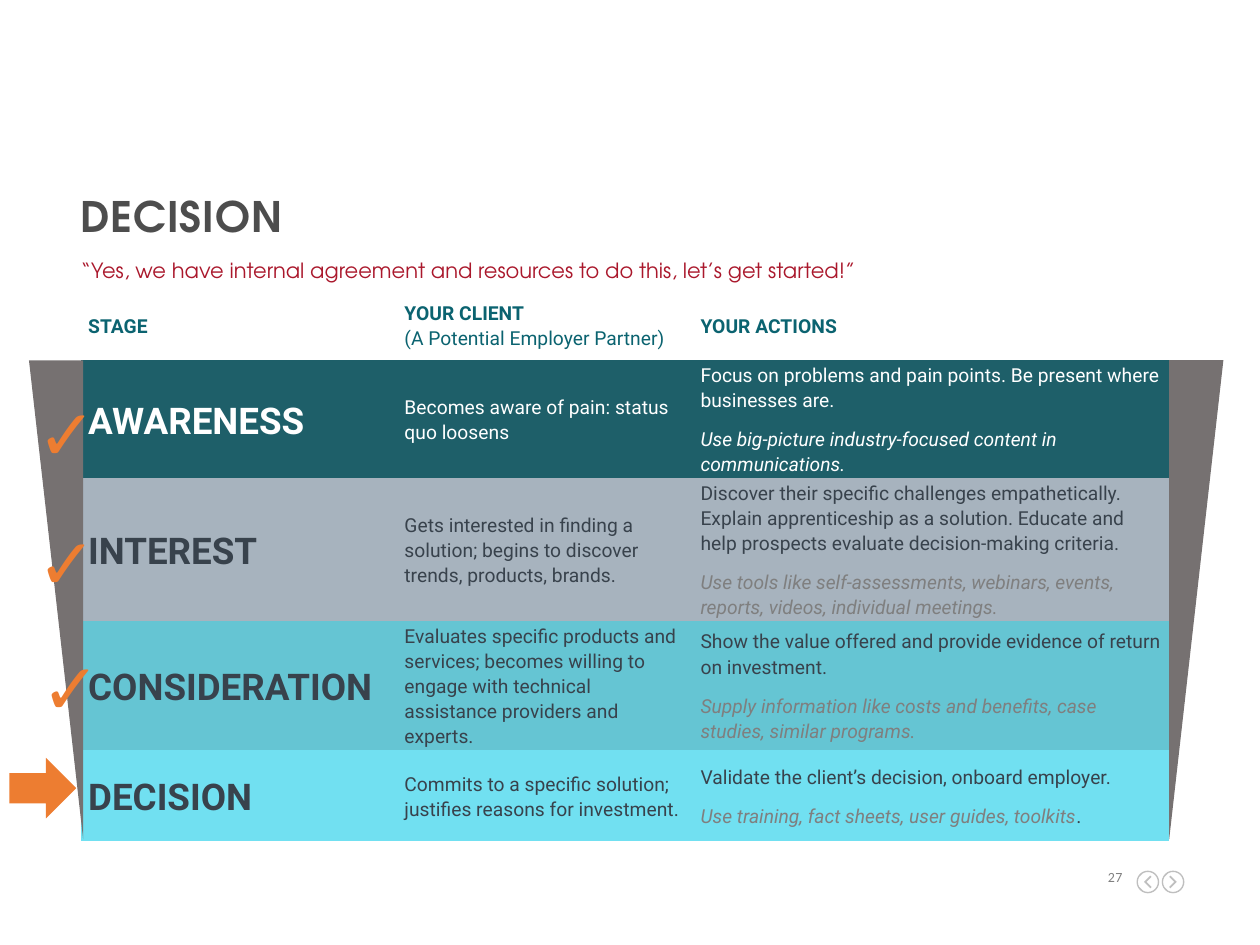
"""Build the Decision slide of the employer partnership stages."""
import copy
from dataclasses import dataclass
from typing import Optional

import pptx
import pptx.dml.color
import pptx.enum.shapes
import pptx.enum.text
import pptx.oxml.ns
import pptx.util

Inches = pptx.util.Inches
Pt = pptx.util.Pt
Shape = pptx.enum.shapes.MSO_SHAPE
Align = pptx.enum.text.PP_ALIGN
Anchor = pptx.enum.text.MSO_ANCHOR

COLORS = {
    "white": "FFFFFF", "heading": "4D4D4D", "quote": "AA182C", "teal": "0B6370",
    "slate": "38424C", "muted": "7F7F7F", "page": "808080", "icon": "BFBFBF",
    "funnel": "767171", "orange": "ED7D31", "awareness": "1E5F69",
    "interest": "A7B3BE", "consideration": "65C5D3", "decision": "71E0F1",
}
DISPLAY, BODY, PLAIN = "TeX Gyre Adventor", "Roboto", "Calibri"
NO_GRID_STYLE = "{2D5ABB26-0587-4C30-8999-92F81FD0307C}"
COLUMN_WIDTHS = (2.51, 2.35, 3.78)
HEADER_HEIGHT = 0.56
TABLE_LEFT, TABLE_TOP = 0.64, 2.3


@dataclass(frozen=True)
class Span:
    """Text with one look."""
    text: str
    color: str
    size: float = 11
    font: str = BODY
    bold: bool = False
    italic: bool = False
    spacing: Optional[int] = None


@dataclass(frozen=True)
class Stage:
    """One row of the stage table."""
    name: str
    client: str
    action: str
    tools: str
    fill: str
    height: float
    text: str = "slate"
    tools_text: str = "muted"
    tail: str = ""


STAGES = (
    Stage("AWARENESS", "Becomes aware of pain: status quo loosens",
          "Focus on problems and pain points. Be present where businesses are.",
          "Use big-picture industry-focused content in communications.",
          "awareness", 0.85, "white", "white"),
    Stage("INTEREST",
          "Gets interested in finding a solution; begins to discover trends, products, brands.",
          "Discover their specific challenges empathetically. Explain apprenticeship as a "
          "solution. Educate and help prospects evaluate decision-making criteria.",
          "Use tools like self-assessments, webinars, events, reports, videos, "
          "individual meetings.", "interest", 1.05),
    Stage("CONSIDERATION",
          "Evaluates specific products and services; becomes willing to engage with "
          "technical assistance providers and experts.",
          "Show the value offered and provide evidence of return on investment.",
          "Supply information like costs and benefits, case studies, similar programs.",
          "consideration", 0.85),
    Stage("DECISION", "Commits to a specific solution; justifies reasons for investment.",
          "Validate the client’s decision, onboard employer.",
          "Use training, fact sheets, user guides, toolkits", "decision", 0.72, tail="."),
)


def rgb(name: str) -> pptx.dml.color.RGBColor:
    """Return a named colour."""
    return pptx.dml.color.RGBColor.from_string(COLORS[name])


def write(para, spans: list[Span]) -> None:
    """Write spans into a paragraph and format its runs."""
    para.text = spans[0].text
    for span in spans[1:]:
        para.add_run().text = span.text
    for run, span in zip(para.runs, spans):
        run.font.name, run.font.size = span.font, Pt(span.size)
        run.font.bold, run.font.italic = span.bold, span.italic
        run.font.color.rgb = rgb(span.color)
        if span.spacing is not None:
            run.font._element.set("spc", str(span.spacing))
    for line_break in para._p.findall(pptx.oxml.ns.qn("a:br")):
        line_break.insert(0, copy.deepcopy(para.runs[0].font._element))


def clear_margins(target) -> None:
    """Take the inner margins off a text frame."""
    target.margin_left = target.margin_right = 0
    target.margin_top = target.margin_bottom = 0


def add_text(slide, left: float, top: float, width: float, height: float, span: Span):
    """Add a wrapped text box and return it."""
    box = slide.shapes.add_textbox(Inches(left), Inches(top), Inches(width), Inches(height))
    box.text_frame.word_wrap = True
    write(box.text_frame.paragraphs[0], [span])
    return box


def paint(shape, color: str) -> None:
    """Give a shape a flat fill."""
    shape.shadow.inherit = False
    shape.fill.solid()
    shape.fill.fore_color.rgb = rgb(color)
    shape.line.fill.background()


def add_shape(slide, kind, left: float, top: float, width: float, height: float, color: str):
    """Add a flat preset shape and return it."""
    shape = slide.shapes.add_shape(kind, Inches(left), Inches(top), Inches(width), Inches(height))
    paint(shape, color)
    return shape


def fill_cell(cell, fill: str, paragraphs: list[list[Span]]) -> None:
    """Format a table cell and write its paragraphs."""
    cell.fill.solid()
    cell.fill.fore_color.rgb = rgb(fill)
    cell.vertical_anchor = Anchor.MIDDLE
    cell.margin_left = cell.margin_right = Inches(0.06)
    cell.margin_top = cell.margin_bottom = 0
    for index, spans in enumerate(paragraphs):
        para = cell.text_frame.add_paragraph() if index else cell.text_frame.paragraphs[0]
        para.line_spacing, para.space_after = 1.12, Pt(4)
        para.space_before = Pt(4 if index else 0)
        write(para, spans)


def add_stage_table(slide) -> None:
    """Add the table of stages."""
    heights = [HEADER_HEIGHT] + [stage.height for stage in STAGES]
    table = slide.shapes.add_table(
        len(heights), len(COLUMN_WIDTHS), Inches(TABLE_LEFT), Inches(TABLE_TOP),
        Inches(sum(COLUMN_WIDTHS)), Inches(sum(heights))).table
    table.first_row = table.horz_banding = False
    table._tbl.tblPr.find(pptx.oxml.ns.qn("a:tableStyleId")).text = NO_GRID_STYLE
    for column, width in zip(table.columns, COLUMN_WIDTHS):
        column.width = Inches(width)
    for row, height in zip(table.rows, heights):
        row.height = Inches(height)
    headers = (
        [Span("STAGE", "teal", bold=True)],
        [Span("YOUR CLIENT\v", "teal", bold=True), Span("(A Potential Employer Partner)", "teal")],
        [Span("YOUR ACTIONS", "teal", bold=True)],
    )
    for column, spans in enumerate(headers):
        fill_cell(table.cell(0, column), "white", [spans])
    for row, stage in enumerate(STAGES, start=1):
        tools = [Span(stage.tools, stage.tools_text, italic=True)]
        if stage.tail:
            tools.append(Span(stage.tail, stage.text))
        contents = (
            [[Span(stage.name, stage.text, 21, bold=True)]],
            [[Span(stage.client, stage.text)]],
            [[Span(stage.action, stage.text)], tools],
        )
        for column, paragraphs in enumerate(contents):
            fill_cell(table.cell(row, column), stage.fill, paragraphs)


def add_page_button(slide, center: float, direction: int) -> None:
    """Add a ringed chevron pointing left (-1) or right (1)."""
    middle, radius = 7.0, 0.09
    ring = add_shape(slide, Shape.DONUT, center - radius, middle - radius,
                     2 * radius, 2 * radius, "icon")
    ring.adjustments[0] = 0.06
    offsets = ((-0.03, -0.04), (0.01, 0), (-0.03, 0.04), (-0.02, 0.05), (0.03, 0), (-0.02, -0.05))
    points = [(Inches(center + direction * x), Inches(middle + y)) for x, y in offsets]
    builder = slide.shapes.build_freeform(*points[0])
    builder.add_line_segments(points[1:], close=True)
    paint(builder.convert_to_shape(), "icon")


def main() -> None:
    """Build and save the deck."""
    deck = pptx.Presentation()
    deck.slide_width, deck.slide_height = Inches(10), Inches(7.5)
    slide = deck.slides.add_slide(deck.slide_layouts[5])

    number = add_text(slide, 8.68, 6.89, 0.23, 0.13, Span("27", "page", 8, PLAIN, spacing=30))
    clear_margins(number.text_frame)
    number.text_frame.paragraphs[0].alignment = Align.RIGHT
    add_page_button(slide, 9.31, 1)
    add_page_button(slide, 9.11, -1)

    title = slide.shapes.title
    title.left, title.top = Inches(TABLE_LEFT), Inches(1.51)
    title.width, title.height = Inches(8.7), Inches(0.56)
    frame = title.text_frame
    clear_margins(frame)
    frame.auto_size = pptx.enum.text.MSO_AUTO_SIZE.NONE
    frame.vertical_anchor = Anchor.TOP
    write(frame.paragraphs[0], [Span("DECISION", "heading", 24, DISPLAY, True, spacing=50)])
    frame.paragraphs[0].alignment = Align.LEFT

    quote = add_text(slide, TABLE_LEFT, 2.08, 8.7, 0.21, Span(
        "“Yes, we have internal agreement and resources to do this, let’s get started!”",
        "quote", 12, DISPLAY))
    clear_margins(quote.text_frame)
    quote.text_frame.paragraphs[0].line_spacing = Pt(12)

    add_stage_table(slide)
    left_side = add_shape(slide, Shape.RIGHT_TRIANGLE, 0.23, 2.86, 0.43, 3.8, "funnel")
    right_side = add_shape(slide, Shape.RIGHT_TRIANGLE, 9.28, 2.86, 0.43, 3.8, "funnel")
    left_side.rotation = 180
    right_side._element.spPr.xfrm.set("flipV", "1")
    arrow = add_shape(slide, Shape.DOWN_ARROW, 0.1, 5.99, 0.48, 0.53, "orange")
    arrow.rotation = 270
    for left, top in ((0.2, 3.04), (0.2, 4.07), (0.23, 5.06)):
        add_text(slide, left, top, 0.84, 0.78, Span("✓", "orange", 40.5, PLAIN, True))
    deck.save("out.pptx")


if __name__ == "__main__":
    main()
